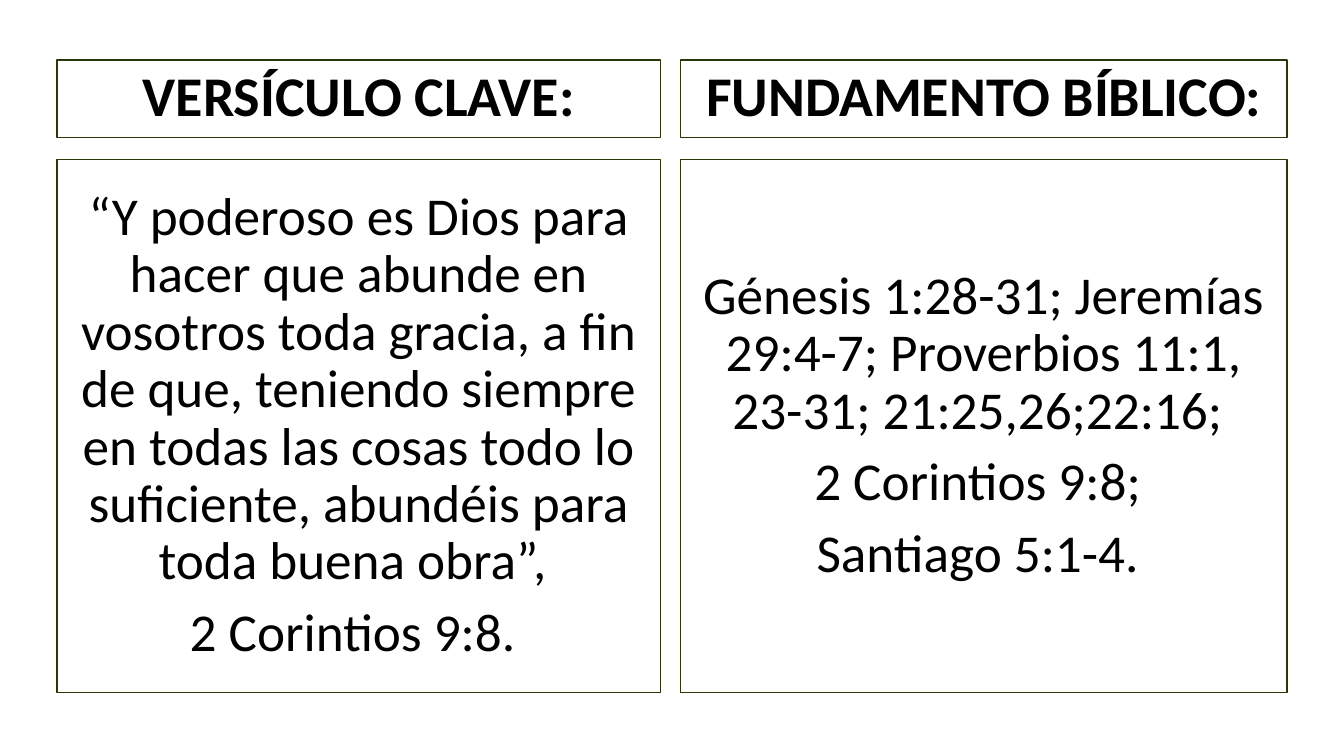
from pptx import Presentation
from pptx import util as u
from pptx.dml.color import RGBColor
from pptx.enum import shapes, text

BLACK = RGBColor(0x00, 0x00, 0x00)
OLIVE = RGBColor(0x27, 0x39, 0x0B)

COLUMNS = [(40.6, 431.3), (486, 433.4)]
ROWS = [(42.9, 55.5), (113.9, 380.9)]


def write(frame, paragraphs, size, bold=False, color=BLACK, font="Calibri"):
    for index, words in enumerate(paragraphs):
        paragraph = frame.paragraphs[0] if index == 0 else frame.add_paragraph()
        paragraph.alignment = text.PP_ALIGN.CENTER
        paragraph.line_spacing = 0.9
        paragraph.space_before = u.Pt(10 if index else 0)
        run = paragraph.add_run()
        run.text = words
        run.font.name = font
        run.font.size = u.Pt(size)
        run.font.bold = bold
        run.font.color.rgb = color


class VersePage:
    """Two-column slide of headed, outlined panels on a grid in points."""

    def __init__(self, deck):
        self.slide = deck.slides.add_slide(deck.slide_layouts[6])

    def panel(self, column, row, paragraphs, **style):
        left, width = COLUMNS[column]
        top, height = ROWS[row]
        box = self.slide.shapes.add_shape(
            shapes.MSO_SHAPE.RECTANGLE, *map(u.Pt, (left, top, width, height)))
        box.shadow.inherit = False
        box.fill.background()
        box.line.color.rgb = OLIVE
        box.line.width = u.Pt(1)
        frame = box.text_frame
        frame.word_wrap = True
        frame.vertical_anchor = text.MSO_ANCHOR.MIDDLE
        write(frame, paragraphs, **style)

    def heading(self, column, title):
        self.panel(column, 0, [title], size=40, bold=True)

    def passage(self, column, paragraphs):
        self.panel(column, 1, paragraphs, size=38)


def main():
    deck = Presentation()
    deck.slide_width = u.Pt(960)
    deck.slide_height = u.Pt(540)
    page = VersePage(deck)
    sections = [
        ("VERSÍCULO CLAVE:", [
            "“Y poderoso es Dios para hacer que abunde en vosotros toda gracia, "
            "a fin de que, teniendo siempre en todas las cosas todo lo suficiente, "
            "abundéis para toda buena obra”, ",
            "2 Corintios 9:8. "]),
        ("FUNDAMENTO BÍBLICO:", [
            "Génesis 1:28-31; Jeremías 29:4-7; Proverbios 11:1, 23-31; 21:25,26;22:16; ",
            "2 Corintios 9:8; ",
            "Santiago 5:1-4. "]),
    ]
    for column, (title, verses) in enumerate(sections):
        page.heading(column, title)
        page.passage(column, verses)
    deck.save("out.pptx")


if __name__ == "__main__":
    main()
